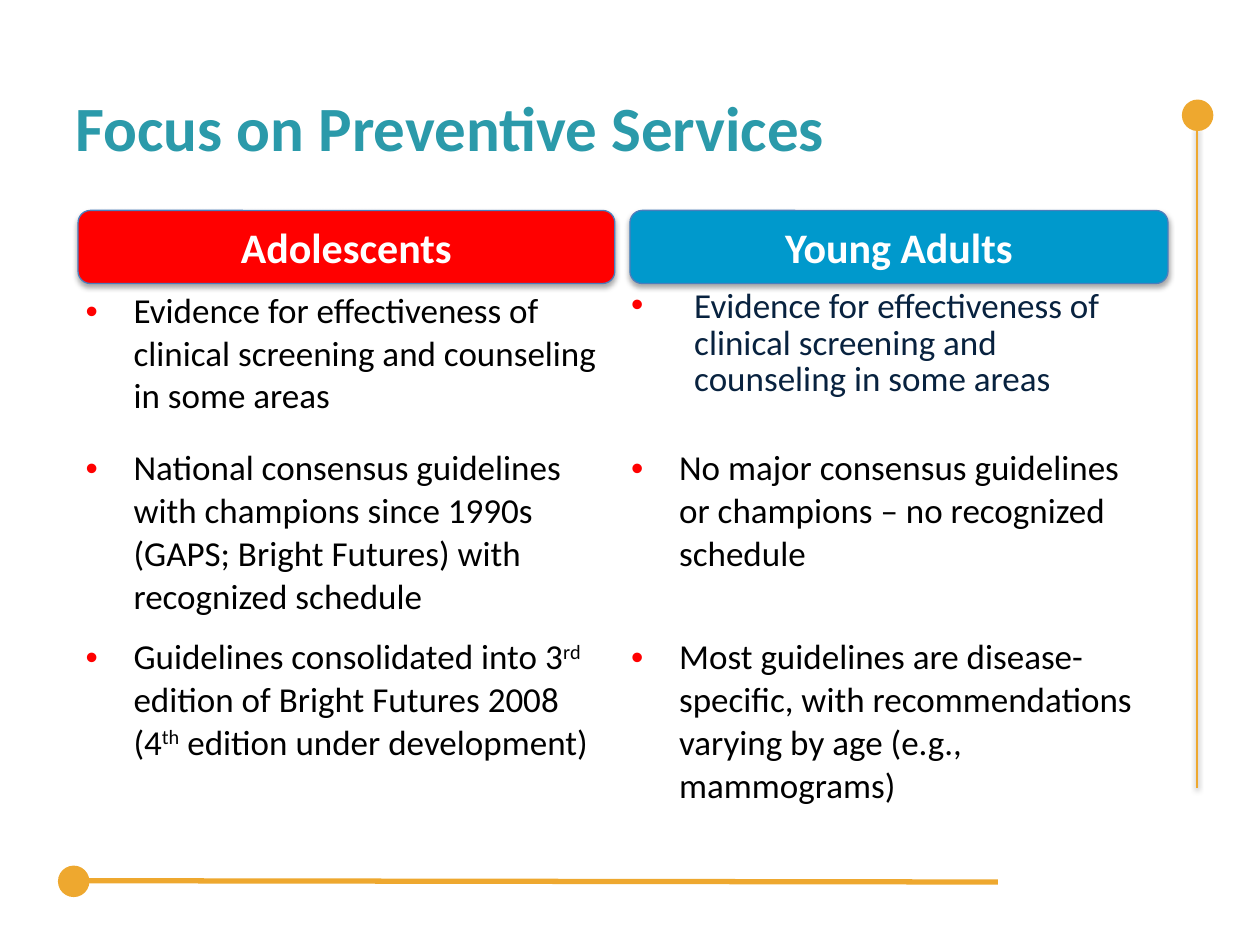
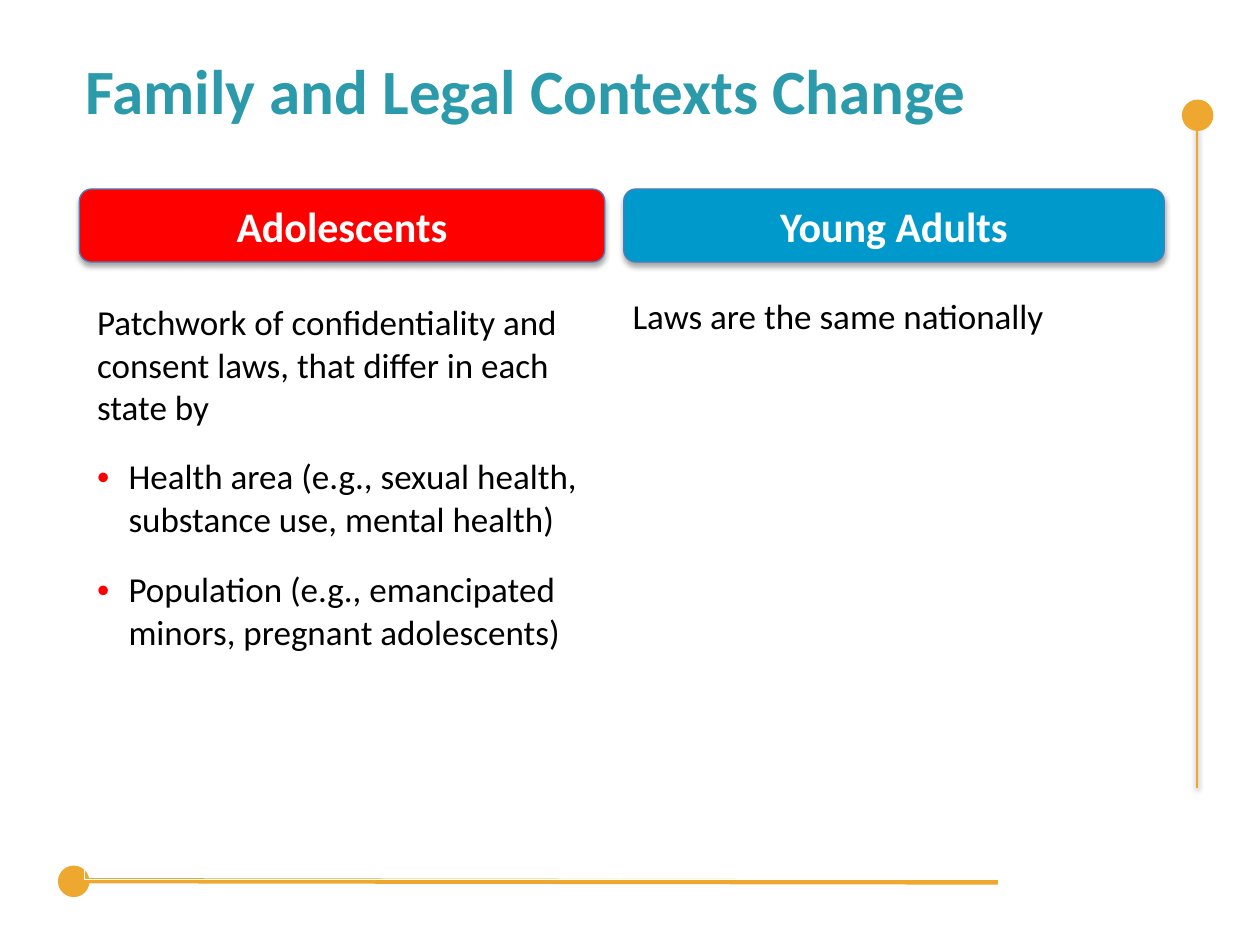
from dataclasses import dataclass

import pptx
import pptx.dml.color
import pptx.enum.shapes
import pptx.enum.text
import pptx.oxml
import pptx.oxml.ns
import pptx.util
from lxml import etree
from pptx.util import Inches

FONT = "Calibri"
TEAL, GOLD, RED, BLUE = "2B9AAA", "EEA82F", "FF0000", "0099CC"
BANNER_EDGE, BLACK, NAVY, WHITE = "4B7EBC", "000000", "08223F", "FFFFFF"
SHAPES = pptx.enum.shapes.MSO_SHAPE
ANCHORS = pptx.enum.text.MSO_ANCHOR
BANNER_HEIGHT = 0.58
DOT_SIZE = 0.25


@dataclass(frozen=True)
class Box:
    left: float
    top: float
    width: float
    height: float

    def lengths(self) -> tuple:
        return tuple(Inches(value) for value in (self.left, self.top, self.width, self.height))


@dataclass(frozen=True)
class Rule:
    start: tuple[float, float]
    end: tuple[float, float]
    weight: float
    dot_left: float
    dot_top: float
    shadowed: bool = False


@dataclass(frozen=True)
class Banner:
    text: str
    color: str
    left: float
    width: float


@dataclass(frozen=True)
class Entry:
    runs: tuple[str, ...]
    indent: float = 0
    color: str = BLACK
    line_spacing: float | None = None
    space_after: float = 0
    margin_top: float = 0.05
    margin_bottom: float = 0.05


@dataclass(frozen=True)
class Comparison:
    title: str
    title_box: Box
    banner_top: float
    banners: tuple[Banner, ...]
    table_left: float
    table_top: float
    columns: tuple[float, ...]
    rows: tuple[float, ...]
    anchor: ANCHORS
    entries: tuple[tuple[Entry, ...], ...]


RULES = (
    Rule((9.5, 6.25), (9.5, 1.01), 1.5, 9.38, 0.79, True),
    Rule((0.67, 6.99), (7.92, 7), 3, 0.46, 6.87),
)

COMPARISONS = (
    Comparison(
        "Focus on Preventive Services",
        Box(0.5, 0.42, 8.93, 1.17),
        1.67,
        (Banner("Adolescents", RED, 0.62, 4.26), Banner("Young Adults", BLUE, 5, 4.27)),
        0.58, 2.25, (4.33, 4.35), (1.25, 1.5, 1.5),
        ANCHORS.TOP,
        (
            (
                Entry(("Evidence for effectiveness of clinical screening and counseling in some areas",), 0.38),
                Entry(("Evidence for effectiveness of clinical screening and counseling in some areas",),
                      0.5, NAVY, 0.85, 6),
            ),
            (
                Entry(("National consensus guidelines with champions since 1990s "
                       "(GAPS; Bright Futures) with recognized schedule",), 0.38),
                Entry(("No major consensus guidelines or champions – no recognized schedule",), 0.38),
            ),
            (
                Entry(("Guidelines consolidated into 3", "rd", " edition of Bright Futures 2008 (4",
                       "th", " edition under development)"), 0.38),
                Entry(("Most guidelines are disease-specific, with recommendations "
                       "varying by age (e.g., mammograms)",), 0.38),
            ),
        ),
    ),
    Comparison(
        "Family and Legal Contexts Change",
        Box(0.58, 0.25, 8.93, 0.92),
        1.5,
        (Banner("Adolescents", RED, 0.63, 4.17), Banner("Young Adults", BLUE, 4.95, 4.29)),
        0.67, 1.92, (4.25, 4.43), (1.59, 0.9, 0.9, 0.84, 0.83),
        ANCHORS.MIDDLE,
        (
            (
                Entry(("Patchwork of confidentiality and consent laws, that differ in each state by",),
                      margin_top=0.43),
                Entry(("Laws are the same nationally",), margin_bottom=0.44),
            ),
            (Entry(("Health area (e.g., sexual health, substance use, mental health)",), 0.25),),
            (Entry(("Population (e.g., emancipated minors, pregnant adolescents)",), 0.25),),
        ),
    ),
)


def rgb(color: str) -> pptx.dml.color.RGBColor:
    return pptx.dml.color.RGBColor.from_string(color)


def add_child(parent, tag: str, **attributes: object):
    child = etree.SubElement(parent, pptx.oxml.ns.qn(tag))
    for name, value in attributes.items():
        child.set(name, str(value))
    return child


def add_shadow(effects, opacity: int, distance: float) -> None:
    shadow = add_child(effects, "a:outerShdw", blurRad=pptx.util.Pt(3.1), dist=pptx.util.Pt(distance),
                       dir=90 * 60000, algn="ctr", rotWithShape=0)
    color = add_child(shadow, "a:srgbClr", val=BLACK)
    add_child(color, "a:alpha", val=opacity * 1000)


def add_run(paragraph, text: str, size: float, color: str, bold: bool = False):
    run = paragraph.add_run()
    run.text = text
    run.font.name = FONT
    run.font.size = pptx.util.Pt(size)
    run.font.bold = bold
    run.font.color.rgb = rgb(color)
    return run


def add_rule(slide, rule: Rule) -> None:
    ends = [Inches(value) for value in rule.start + rule.end]
    connector = slide.shapes.add_connector(pptx.enum.shapes.MSO_CONNECTOR.STRAIGHT, *ends)
    connector.line.color.rgb = rgb(GOLD)
    connector.line.width = pptx.util.Pt(rule.weight)
    effects = add_child(connector._element.spPr, "a:effectLst")
    if rule.shadowed:
        add_shadow(effects, 38, 1.6)
    box = Box(rule.dot_left, rule.dot_top, DOT_SIZE, DOT_SIZE)
    dot = slide.shapes.add_shape(SHAPES.OVAL, *box.lengths())
    dot.shadow.inherit = False
    dot.rotation = 330
    dot.fill.solid()
    dot.fill.fore_color.rgb = rgb(GOLD)
    dot.line.fill.background()


def add_title(slide, text: str, box: Box) -> None:
    shape = slide.shapes.add_textbox(*box.lengths())
    frame = shape.text_frame
    frame.word_wrap = True
    frame.vertical_anchor = ANCHORS.MIDDLE
    add_run(frame.paragraphs[0], text, 36, TEAL, True)


def add_banner(slide, banner: Banner, top: float) -> None:
    box = Box(banner.left, top, banner.width, BANNER_HEIGHT)
    shape = slide.shapes.add_shape(SHAPES.ROUNDED_RECTANGLE, *box.lengths())
    shape.fill.solid()
    shape.fill.fore_color.rgb = rgb(banner.color)
    shape.line.color.rgb = rgb(BANNER_EDGE)
    shape.line.width = pptx.util.Pt(0.75)
    shape.shadow.inherit = False
    add_shadow(shape._element.spPr.find(pptx.oxml.ns.qn("a:effectLst")), 35, 1.8)
    shape.text_frame.vertical_anchor = ANCHORS.MIDDLE
    paragraph = shape.text_frame.paragraphs[0]
    paragraph.alignment = pptx.enum.text.PP_ALIGN.CENTER
    add_run(paragraph, banner.text, 24, WHITE, True)


def add_bullet(paragraph, indent: float) -> None:
    properties = paragraph._p.get_or_add_pPr()
    properties.set("marL", str(Inches(indent)))
    properties.set("indent", str(-Inches(indent)))
    color = add_child(properties, "a:buClr")
    add_child(color, "a:srgbClr", val=RED)
    add_child(properties, "a:buFont", typeface="Arial")
    add_child(properties, "a:buChar", char="•")


def fill_cell(cell, entry: Entry) -> None:
    cell.margin_top = Inches(entry.margin_top)
    cell.margin_bottom = Inches(entry.margin_bottom)
    paragraph = cell.text_frame.paragraphs[0]
    if entry.indent:
        add_bullet(paragraph, entry.indent)
    if entry.line_spacing:
        paragraph.line_spacing = entry.line_spacing
    paragraph.space_after = pptx.util.Pt(entry.space_after)
    for index, text in enumerate(entry.runs):
        run = add_run(paragraph, text, 20, entry.color)
        if index % 2:
            run._r.get_or_add_rPr().set("baseline", "30000")


def add_comparison_table(slide, comparison: Comparison) -> None:
    box = Box(comparison.table_left, comparison.table_top, sum(comparison.columns), sum(comparison.rows))
    table = slide.shapes.add_table(len(comparison.rows), len(comparison.columns), *box.lengths()).table
    table.first_row = False
    table.horz_banding = False
    for column, width in zip(table.columns, comparison.columns):
        column.width = Inches(width)
    for row, height in zip(table.rows, comparison.rows):
        row.height = Inches(height)
    for cell in table.iter_cells():
        cell.fill.background()
        cell.vertical_anchor = comparison.anchor
    for row, entries in zip(table.rows, comparison.entries):
        for cell, entry in zip(row.cells, entries):
            fill_cell(cell, entry)


def add_comparison_slide(presentation, comparison: Comparison) -> None:
    slide = presentation.slides.add_slide(presentation.slide_layouts[6])
    for rule in RULES:
        add_rule(slide, rule)
    add_title(slide, comparison.title, comparison.title_box)
    add_comparison_table(slide, comparison)
    for banner in comparison.banners:
        add_banner(slide, banner, comparison.banner_top)


def main() -> None:
    presentation = pptx.Presentation()
    presentation.slide_width = Inches(10)
    presentation.slide_height = Inches(7.5)
    for comparison in COMPARISONS:
        add_comparison_slide(presentation, comparison)
    presentation.save("out.pptx")


if __name__ == "__main__":
    main()
